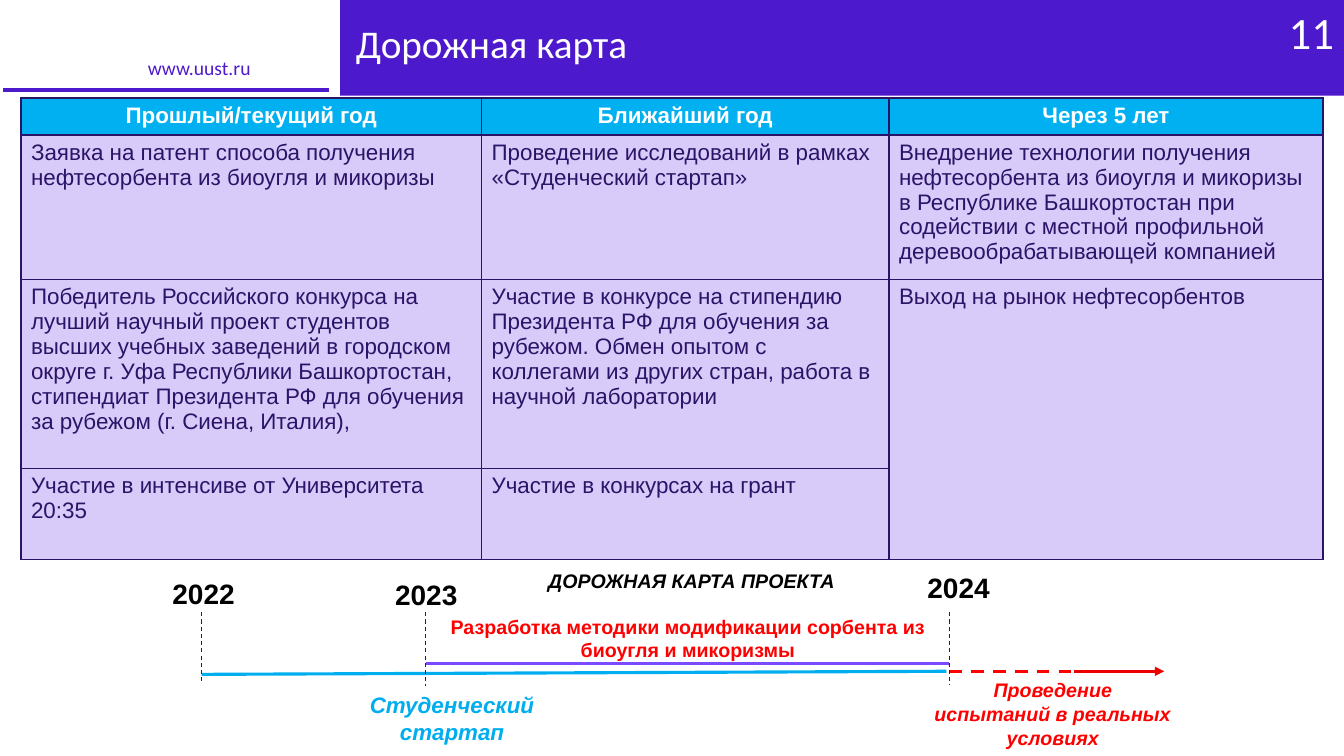
from dataclasses import dataclass

import lxml.etree
import pptx
import pptx.dml.color
import pptx.enum.dml
import pptx.enum.shapes
import pptx.enum.text
import pptx.oxml.ns
import pptx.util

Pt = pptx.util.Pt
Align = pptx.enum.text.PP_ALIGN
Anchor = pptx.enum.text.MSO_ANCHOR
Dash = pptx.enum.dml.MSO_LINE


@dataclass(frozen=True)
class Theme:
    heading_font: str = "Calibri"
    body_font: str = "Arial"
    purple: str = "4D19CC"
    violet: str = "7A4AFE"
    navy: str = "2A1468"
    lilac: str = "D8CAF9"
    header_blue: str = "00B0F0"
    blue: str = "00AEEF"
    red: str = "FF0000"
    arrow_red: str = "EE0000"
    white: str = "FFFFFF"
    black: str = "000000"
    number_size: int = 32
    title_size: int = 28
    year_size: int = 20
    table_size: int = 16
    label_size: int = 14


THEME = Theme()

COLUMN_WIDTHS = (329, 291, 310)
ROW_HEIGHTS = (26.5, 103, 135, 65)
ROADMAP = (
    ("Прошлый/текущий год", "Ближайший год", "Через 5 лет"),
    (
        "Заявка на патент способа получения нефтесорбента из биоугля и микоризы",
        "Проведение исследований в рамках «Студенческий стартап»",
        "Внедрение технологии получения нефтесорбента из биоугля и микоризы "
        "в Республике Башкортостан при содействии с местной профильной "
        "деревообрабатывающей компанией",
    ),
    (
        "Победитель Российского конкурса на лучший научный проект студентов "
        "высших учебных заведений в городском округе г. Уфа Республики "
        "Башкортостан, стипендиат Президента РФ для обучения за рубежом "
        "(г. Сиена, Италия),",
        "Участие в конкурсе на стипендию Президента РФ для обучения за рубежом. "
        "Обмен опытом с коллегами из других стран, работа в научной лаборатории",
        "Выход на рынок нефтесорбентов",
    ),
    ("Участие в интенсиве от Университета 20:35", "Участие в конкурсах на грант", ""),
)


def rgb(color):
    return pptx.dml.color.RGBColor.from_string(color)


def write(frame, text, size, color, font=THEME.body_font, align=Align.LEFT,
          bold=False, italic=False, spacing=None):
    para = frame.paragraphs[0]
    para.text = text
    para.alignment = align
    para.line_spacing = spacing
    para.font.name = font
    para.font.size = Pt(size)
    para.font.bold = bold
    para.font.italic = italic
    para.font.color.rgb = rgb(color)


def add_text(page, left, top, width, height, text, size, color, **style):
    box = page.shapes.add_textbox(Pt(left), Pt(top), Pt(width), Pt(height))
    box.text_frame.word_wrap = True
    write(box.text_frame, text, size, color, **style)


def add_label(page, left, top, width, height, text, size, color, italic=False):
    add_text(page, left, top, width, height, text, size, color,
             align=Align.CENTER, bold=True, italic=italic)


def add_bar(page, left, top, width, height, outline=None):
    bar = page.shapes.add_shape(pptx.enum.shapes.MSO_SHAPE.RECTANGLE,
                                Pt(left), Pt(top), Pt(width), Pt(height))
    bar.shadow.inherit = False
    bar.fill.solid()
    bar.fill.fore_color.rgb = rgb(THEME.purple)
    if outline:
        bar.line.color.rgb = rgb(THEME.white)
        bar.line.width = Pt(outline)
    else:
        bar.line.fill.background()


def add_line(page, start, end, color, width=2.25, dash=None, arrow=False):
    line = page.shapes.add_connector(pptx.enum.shapes.MSO_CONNECTOR.STRAIGHT,
                                     *map(Pt, start + end))
    line.line.color.rgb = rgb(color)
    line.line.width = Pt(width)
    if dash:
        line.line.dash_style = dash
    if arrow:
        tail = lxml.etree.SubElement(line.line._get_or_add_ln(),
                                     pptx.oxml.ns.qn("a:tailEnd"))
        tail.set("type", "triangle")
    lxml.etree.SubElement(line._element.spPr, pptx.oxml.ns.qn("a:effectLst"))


def set_borders(cell):
    properties = cell._tc.get_or_add_tcPr()
    for position, side in enumerate(("lnL", "lnR", "lnT", "lnB")):
        border = lxml.etree.Element(pptx.oxml.ns.qn("a:" + side), w=str(Pt(1)))
        fill = lxml.etree.SubElement(border, pptx.oxml.ns.qn("a:solidFill"))
        lxml.etree.SubElement(fill, pptx.oxml.ns.qn("a:srgbClr"), val=THEME.navy)
        properties.insert(position, border)


def add_roadmap_table(page):
    table = page.shapes.add_table(
        len(ROW_HEIGHTS), len(COLUMN_WIDTHS), Pt(15), Pt(70),
        Pt(sum(COLUMN_WIDTHS)), Pt(sum(ROW_HEIGHTS))).table
    for column, width in zip(table.columns, COLUMN_WIDTHS):
        column.width = Pt(width)
    for row, height in zip(table.rows, ROW_HEIGHTS):
        row.height = Pt(height)
    table.cell(2, 2).merge(table.cell(3, 2))
    for row_index, texts in enumerate(ROADMAP):
        header = row_index == 0
        for column_index, text in enumerate(texts):
            cell = table.cell(row_index, column_index)
            cell.fill.solid()
            cell.fill.fore_color.rgb = rgb(THEME.header_blue if header else THEME.lilac)
            set_borders(cell)
            if text:
                write(cell.text_frame, text, THEME.table_size,
                      THEME.white if header else THEME.navy, bold=header,
                      align=Align.CENTER if header else Align.LEFT)


def add_header(page):
    add_bar(page, 243, 0, 717, 68.4)
    add_bar(page, 0, 60.5, 237.6, 7.2, outline=4.5)
    add_text(page, 98.6, 38.2, 112.3, 19.4, "www.uust.ru", THEME.label_size,
             THEME.purple, font=THEME.heading_font, spacing=0.9)
    title = page.shapes.title
    title.left, title.top, title.width, title.height = map(Pt, (247, 16, 713, 33))
    title.text_frame.vertical_anchor = Anchor.MIDDLE
    title.text_frame.auto_size = pptx.enum.text.MSO_AUTO_SIZE.NONE
    write(title.text_frame, "Дорожная карта", THEME.title_size, THEME.white,
          font=THEME.heading_font, spacing=0.9)
    add_text(page, 901, 0, 59, 46, "11", THEME.number_size, THEME.white,
             font=THEME.heading_font, align=Align.RIGHT)


def add_timeline(page):
    add_line(page, (304.5, 474), (678, 474), THEME.violet)
    add_line(page, (144, 481.7), (676, 479.5), THEME.blue)
    add_line(page, (678, 479.5), (767, 479.5), THEME.red, dash=Dash.DASH)
    add_line(page, (767, 479.5), (831.6, 479.5), THEME.arrow_red, arrow=True)
    years = (
        ("2022", 144, 487.5, 100.8, 408.2, 89.3),
        ("2023", 304.2, 490.3, 267.8, 409, 73.4),
        ("2024", 678, 489.6, 645.8, 404, 77.8),
    )
    for year, mark, bottom, left, top, width in years:
        add_line(page, (mark, 437.3), (mark, bottom), THEME.navy, 0.75, Dash.DASH)
        add_label(page, left, top, width, 31.7, year, THEME.year_size, THEME.black)
    add_label(page, 372.2, 402.5, 243.4, 24.5, "ДОРОЖНАЯ КАРТА ПРОЕКТА",
              THEME.label_size, THEME.black, italic=True)
    add_label(page, 308.9, 435.6, 365, 41,
              "Разработка методики модификации сорбента из биоугля и микоризмы",
              THEME.label_size, THEME.red)
    add_label(page, 660.2, 481, 183.6, 58.3,
              "Проведение испытаний в реальных условиях",
              THEME.label_size, THEME.red, italic=True)
    add_label(page, 254.9, 490.3, 136, 46, "Студенческий стартап",
              THEME.table_size, THEME.blue, italic=True)


def main():
    deck = pptx.Presentation()
    deck.slide_width, deck.slide_height = Pt(960), Pt(540)
    page = deck.slides.add_slide(deck.slide_layouts.get_by_name("Title Only"))
    add_header(page)
    title = page.shapes.title._element
    page.shapes._spTree.append(title)
    add_timeline(page)
    add_roadmap_table(page)
    deck.save("out.pptx")


if __name__ == "__main__":
    main()
